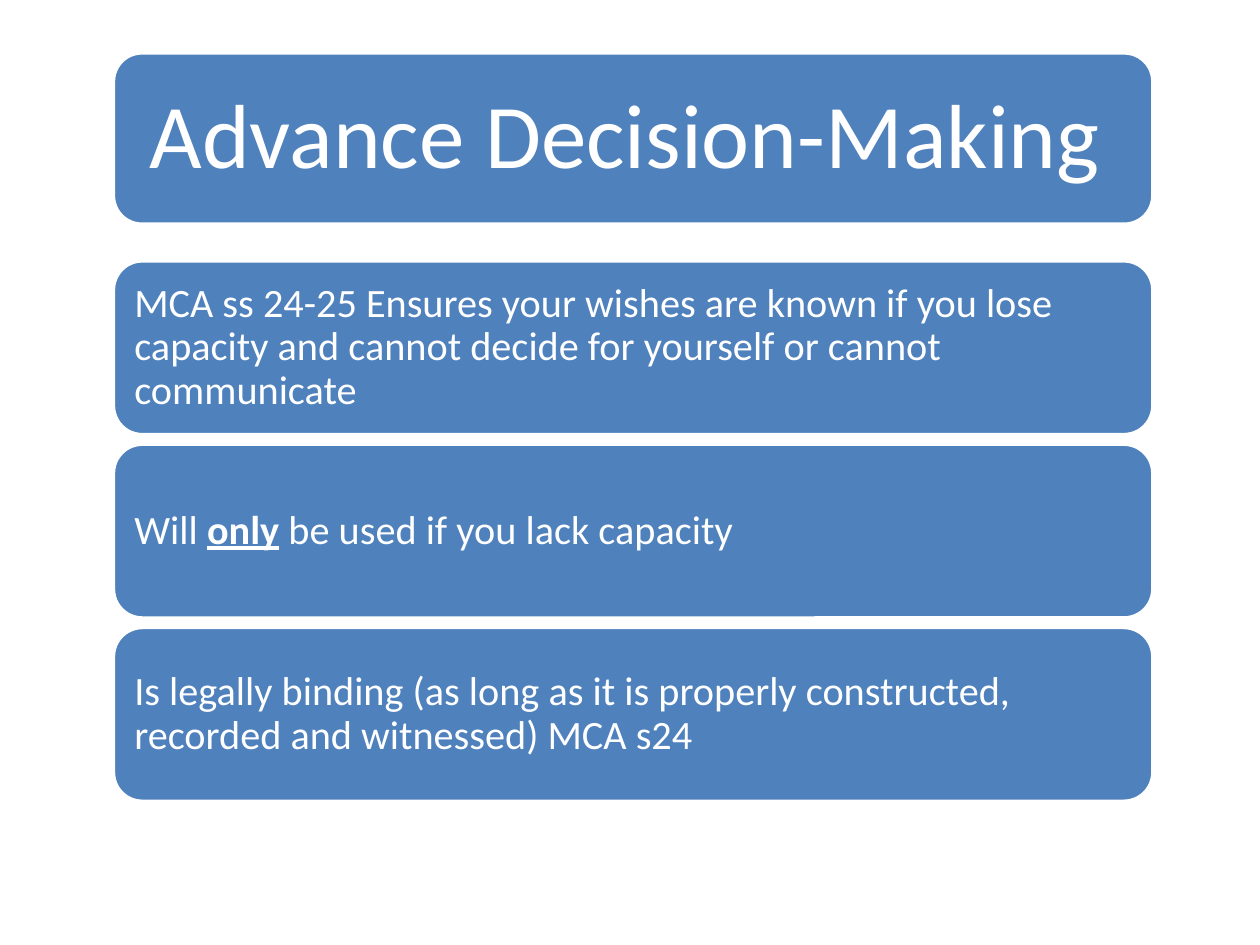
import pptx
import pptx.util
import pptx.dml.color
import pptx.enum.shapes
import pptx.enum.text

Inches, Pt = pptx.util.Inches, pptx.util.Pt

TITLE = [("Advance Decision-Making", {})]
POINTS = [
    [("MCA ss 24-25 Ensures your wishes are known if you lose capacity "
      "and cannot decide for yourself or cannot communicate", {})],
    [("Will ", {}), ("only", {"bold": True, "underline": True}),
     (" be used if you lack capacity", {})],
    [("Is legally binding (as long as it is properly constructed, "
      "recorded and witnessed) MCA s24", {})],
]

LEFT, WIDTH = 0.9, 8.25
TITLE_TOP, TITLE_HEIGHT = 0.42, 1.36
LIST_TOP, LIST_BOTTOM, POINT_HEIGHT = 2.07, 6.36, 1.38
BLUE, WHITE = "4F81BD", "FFFFFF"


def color(value):
    return pptx.dml.color.RGBColor.from_string(value)


def add_panel(s, top, height, runs, size, inset):
    sp = s.shapes.add_shape(
        pptx.enum.shapes.MSO_SHAPE.ROUNDED_RECTANGLE,
        Inches(LEFT), Inches(top), Inches(WIDTH), Inches(height))
    sp.shadow.inherit = False
    sp.fill.solid()
    sp.fill.fore_color.rgb = color(BLUE)
    sp.line.color.rgb = color(WHITE)
    sp.line.width = Pt(2)
    tf = sp.text_frame
    tf.word_wrap = True
    tf.vertical_anchor = pptx.enum.text.MSO_ANCHOR.MIDDLE
    for side in ("left", "top", "right", "bottom"):
        setattr(tf, f"margin_{side}", Inches(inset))
    p = tf.paragraphs[0]
    p.alignment = pptx.enum.text.PP_ALIGN.LEFT
    p.line_spacing = 0.9
    for text, extra in runs:
        r = p.add_run()
        r.text = text
        r.font.color.rgb = color(WHITE)
        for name, value in {"name": "Calibri", "size": Pt(size), **extra}.items():
            setattr(r.font, name, value)


def main():
    prs = pptx.Presentation()
    prs.slide_width, prs.slide_height = Inches(10), Inches(7.5)
    s = prs.slides.add_slide(prs.slide_layouts[6])
    add_panel(s, TITLE_TOP, TITLE_HEIGHT, TITLE, 52, 0.22)
    pitch = (LIST_BOTTOM - LIST_TOP - POINT_HEIGHT) / (len(POINTS) - 1)
    for i, runs in enumerate(POINTS):
        add_panel(s, LIST_TOP + i * pitch, POINT_HEIGHT, runs, 23, 0.1)
    prs.save("out.pptx")


if __name__ == "__main__":
    main()
